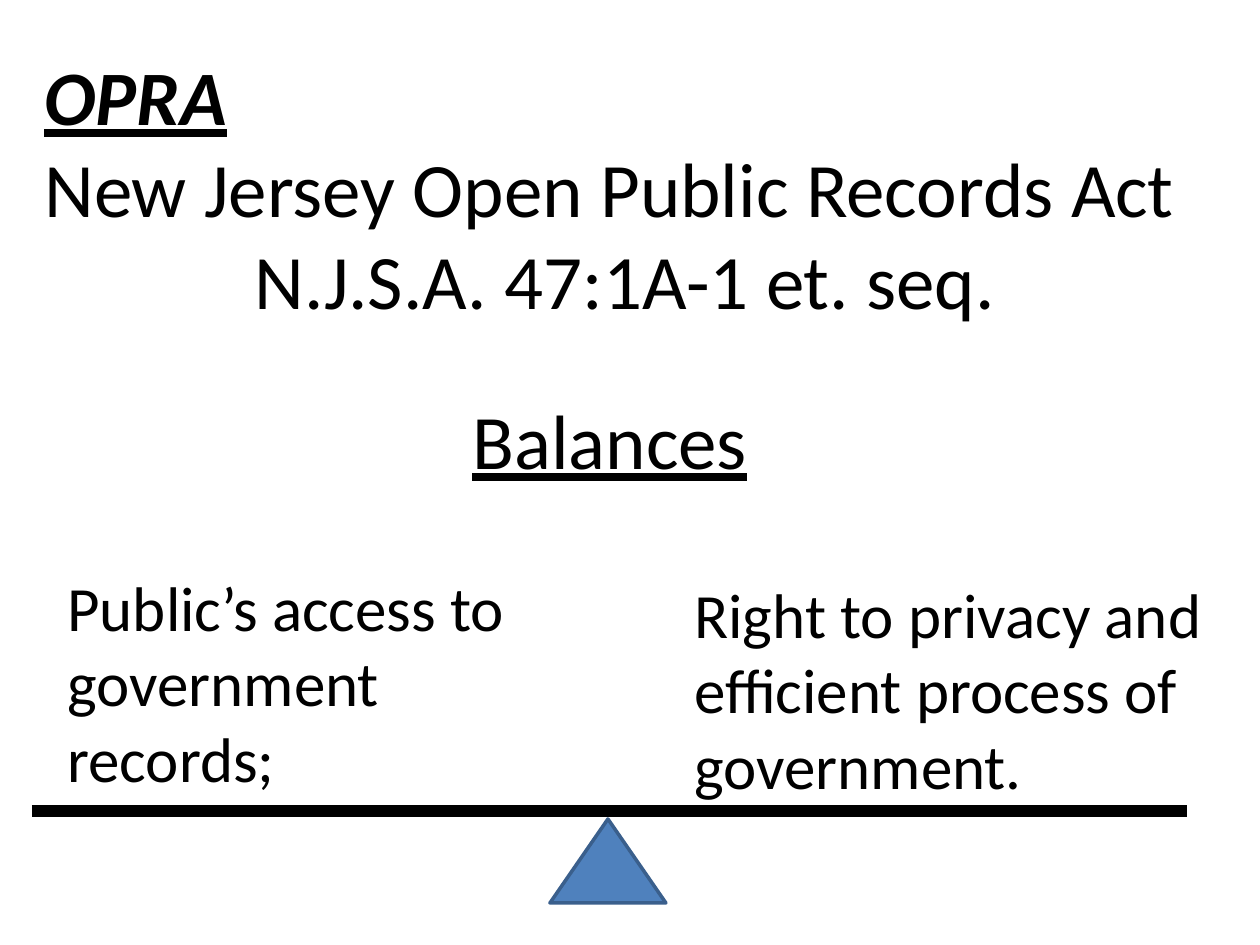
from dataclasses import dataclass

from lxml import etree
from pptx import Presentation
from pptx.dml.color import RGBColor
from pptx.enum import shapes, text
from pptx.oxml import ns
from pptx.util import Emu, Pt

PX = 914400 / 126


@dataclass(frozen=True)
class Theme:
    font: str = "Calibri"
    ink: RGBColor = RGBColor(0x00, 0x00, 0x00)
    fulcrum: RGBColor = RGBColor(0x4F, 0x81, 0xBD)
    fulcrum_edge: RGBColor = RGBColor(0x3A, 0x5F, 0x8C)
    heading: int = 44
    body: int = 36


theme = Theme()


def px(*lengths):
    return [Emu(round(length * PX)) for length in lengths]


def add_text(paragraph, words, size=theme.body, bold=False, italic=False,
             underline=False, centred=False):
    paragraph.alignment = text.PP_ALIGN.CENTER if centred else text.PP_ALIGN.LEFT
    run = paragraph.add_run()
    run.text = words
    font = run.font
    font.name, font.size = theme.font, Pt(size)
    font.bold, font.italic, font.underline = bold, italic, underline
    font.color.rgb = theme.ink


presentation = Presentation()
presentation.slide_width, presentation.slide_height = px(1260, 945)
slide = presentation.slides.add_slide(presentation.slide_layouts[6])

# Title, the two sides of the balance, and the word between them
heading = {"size": theme.heading}
text_boxes = [
    ((32, 42, 1187, 292), [
        ("OPRA", {**heading, "bold": True, "italic": True, "underline": True}),
        ("New Jersey Open Public Records Act", heading),
        ("N.J.S.A. 47:1A-1 et. seq.", {**heading, "centred": True}),
    ]),
    ((55, 562, 546, 242), [
        ("Public’s access to", {}),
        ("government records;", {}),
    ]),
    ((682, 569, 537, 242), [
        ("Right to privacy and", {}),
        ("efficient process of government.", {}),
    ]),
    ((363, 386, 494, 106), [
        ("Balances", {**heading, "underline": True, "centred": True}),
    ]),
]
for box, lines in text_boxes:
    frame = slide.shapes.add_textbox(*px(*box)).text_frame
    frame.word_wrap = True
    for index, (words, style) in enumerate(lines):
        paragraph = frame.add_paragraph() if index else frame.paragraphs[0]
        add_text(paragraph, words, **style)

# Beam
beam = slide.shapes.add_connector(
    shapes.MSO_CONNECTOR.STRAIGHT, *px(32, 811, 1187, 811))
beam.line.color.rgb = theme.ink
beam.line.width = Pt(7.25)
etree.SubElement(beam._element.spPr, ns.qn("a:effectLst"))

# Fulcrum
fulcrum = slide.shapes.add_shape(
    shapes.MSO_SHAPE.ISOSCELES_TRIANGLE, *px(550, 819, 116, 84))
fulcrum.shadow.inherit = False
fulcrum.fill.solid()
fulcrum.fill.fore_color.rgb = theme.fulcrum
fulcrum.line.color.rgb = theme.fulcrum_edge
fulcrum.line.width = Pt(2)

presentation.save("out.pptx")
